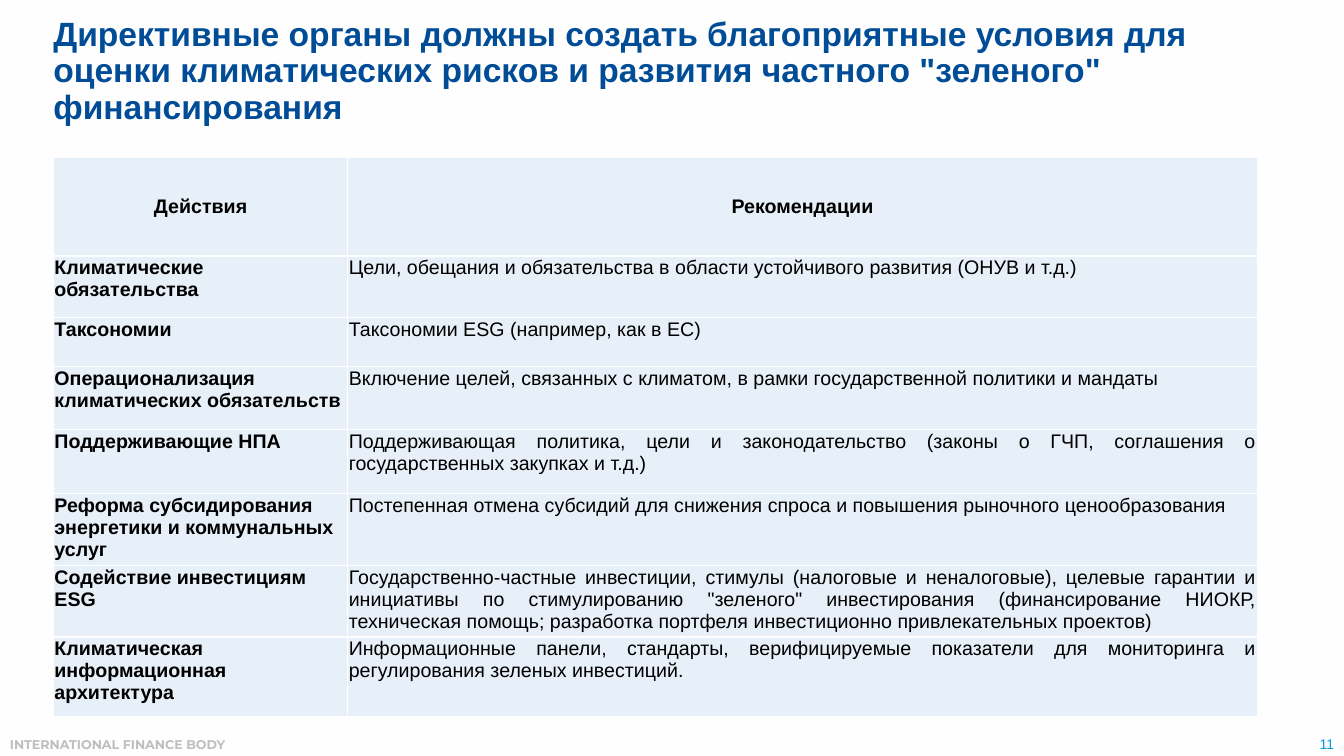
from dataclasses import dataclass

from lxml.etree import SubElement
from pptx import Presentation
from pptx.dml.color import RGBColor
from pptx.enum.text import MSO_ANCHOR, PP_ALIGN
from pptx.oxml.ns import qn
from pptx.slide import Slide
from pptx.table import _Cell
from pptx.text.text import TextFrame
from pptx.util import Inches, Pt


@dataclass(frozen=True)
class Theme:
    font: str = "Arial"
    footer_font: str = "Montserrat"
    background: str = "FEFEFE"
    title: str = "004C97"
    body: str = "000000"
    cell: str = "E7EFF9"
    footer: str = "BEBEBE"
    number: str = "009CDE"
    title_size: int = 24
    body_size: int = 14
    number_size: int = 10
    footer_size: int = 9
    border_width: int = 1


THEME = Theme()


@dataclass(frozen=True)
class Style:
    size: int
    color: str
    bold: bool = False
    font: str = THEME.font
    align: PP_ALIGN = PP_ALIGN.LEFT
    anchor: MSO_ANCHOR = MSO_ANCHOR.TOP
    line_spacing: float = 1.0


@dataclass(frozen=True)
class Label:
    text: str
    left: float
    top: float
    width: float
    height: float
    style: Style
    inset_x: float = 0.1
    inset_y: float = 0.05


@dataclass(frozen=True)
class Measure:
    action: str
    advice: str
    height: float


LABELS = [
    Label("INTERNATIONAL FINANCE BODY", 0, 7.26, 10, 0.25,
          Style(THEME.footer_size, THEME.footer, True, THEME.footer_font)),
    Label("11", 12.01, 7.24, 1.32, 0.27,
          Style(THEME.number_size, THEME.number, align=PP_ALIGN.RIGHT,
                anchor=MSO_ANCHOR.BOTTOM)),
    Label("Директивные органы должны создать благоприятные условия для оценки "
          "климатических рисков и развития частного \"зеленого\" финансирования",
          0.53, 0, 12.37, 1.43,
          Style(THEME.title_size, THEME.title, True, anchor=MSO_ANCHOR.MIDDLE,
                line_spacing=0.9),
          inset_x=0, inset_y=0),
]

HEADER = Measure("Действия", "Рекомендации", 0.98)
MEASURES = [
    Measure("Климатические обязательства",
            "Цели, обещания и обязательства в области устойчивого развития "
            "(ОНУВ и т.д.)", 0.61),
    Measure("Таксономии", "Таксономии ESG (например, как в ЕС)", 0.49),
    Measure("Операционализация климатических обязательств",
            "Включение целей, связанных с климатом, в рамки государственной "
            "политики и мандаты", 0.62),
    Measure("Поддерживающие НПА",
            "Поддерживающая политика, цели и законодательство (законы о ГЧП, "
            "соглашения о государственных закупках и т.д.)", 0.64),
    Measure("Реформа субсидирования энергетики и коммунальных услуг",
            "Постепенная отмена субсидий для снижения спроса и повышения "
            "рыночного ценообразования", 0.61),
    Measure("Содействие инвестициям ESG",
            "Государственно-частные инвестиции, стимулы (налоговые и "
            "неналоговые), целевые гарантии и инициативы по стимулированию "
            "\"зеленого\" инвестирования (финансирование НИОКР, техническая "
            "помощь; разработка портфеля инвестиционно привлекательных "
            "проектов)", 0.68),
    Measure("Климатическая информационная архитектура",
            "Информационные панели, стандарты, верифицируемые показатели для "
            "мониторинга и регулирования зеленых инвестиций.", 0.79),
]
COLUMN_WIDTHS = (2.92, 9.02)

HEADER_STYLE = Style(THEME.body_size, THEME.body, True,
                     align=PP_ALIGN.CENTER, anchor=MSO_ANCHOR.MIDDLE)
ACTION_STYLE = Style(THEME.body_size, THEME.body, True)
ADVICE_STYLE = Style(THEME.body_size, THEME.body, align=PP_ALIGN.JUSTIFY)


def write(frame: TextFrame, text: str, style: Style) -> None:
    frame.text = text
    paragraph = frame.paragraphs[0]
    paragraph.alignment = style.align
    paragraph.line_spacing = style.line_spacing
    font = paragraph.runs[0].font
    font.name = style.font
    font.size = Pt(style.size)
    font.bold = style.bold
    font.color.rgb = RGBColor.from_string(style.color)


def add_label(slide: Slide, label: Label) -> None:
    frame = slide.shapes.add_textbox(
        Inches(label.left), Inches(label.top),
        Inches(label.width), Inches(label.height)).text_frame
    frame.word_wrap = True
    frame.vertical_anchor = label.style.anchor
    frame.margin_left = frame.margin_right = Inches(label.inset_x)
    frame.margin_top = frame.margin_bottom = Inches(label.inset_y)
    write(frame, label.text, label.style)


def add_borders(cell: _Cell) -> None:
    properties = cell._tc.get_or_add_tcPr()
    for side in ("a:lnL", "a:lnR", "a:lnT", "a:lnB"):
        line = SubElement(properties, qn(side), w=str(Pt(THEME.border_width)))
        fill = SubElement(line, qn("a:solidFill"))
        SubElement(fill, qn("a:srgbClr"), val=THEME.background)


def fill_cell(cell: _Cell, text: str, style: Style) -> None:
    add_borders(cell)
    cell.fill.solid()
    cell.fill.fore_color.rgb = RGBColor.from_string(THEME.cell)
    cell.margin_left = cell.margin_right = cell.margin_top = Inches(0.01)
    cell.margin_bottom = Inches(0)
    cell.vertical_anchor = style.anchor
    write(cell.text_frame, text, style)


def add_measures(slide: Slide) -> None:
    rows = [HEADER, *MEASURES]
    table = slide.shapes.add_table(
        len(rows), len(COLUMN_WIDTHS), Inches(0.53), Inches(1.56),
        Inches(sum(COLUMN_WIDTHS)),
        Inches(sum(row.height for row in rows))).table
    table.first_row = table.horz_banding = False
    for column, width in zip(table.columns, COLUMN_WIDTHS):
        column.width = Inches(width)
    for index, measure in enumerate(rows):
        table.rows[index].height = Inches(measure.height)
        is_header = measure is HEADER
        fill_cell(table.cell(index, 0), measure.action,
                  HEADER_STYLE if is_header else ACTION_STYLE)
        fill_cell(table.cell(index, 1), measure.advice,
                  HEADER_STYLE if is_header else ADVICE_STYLE)


def main() -> None:
    deck = Presentation()
    deck.slide_width, deck.slide_height = Inches(13.33), Inches(7.5)
    slide = deck.slides.add_slide(deck.slide_layouts[6])
    slide.background.fill.solid()
    slide.background.fill.fore_color.rgb = RGBColor.from_string(THEME.background)

    # Footer, slide number and title
    for label in LABELS:
        add_label(slide, label)

    # Table of actions and recommendations
    add_measures(slide)

    deck.save("out.pptx")


if __name__ == "__main__":
    main()
